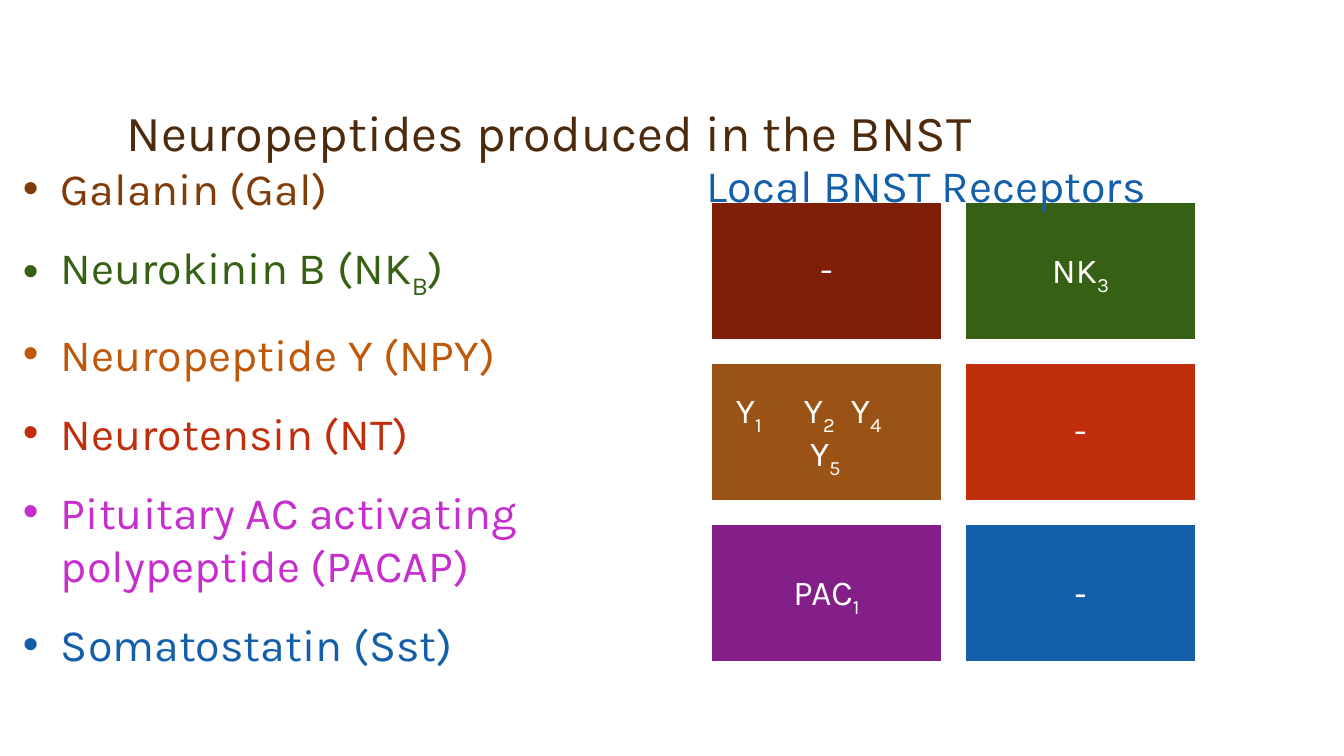
"""Build the slide on neuropeptides of the BNST and their local receptors."""
from lxml import etree
from pptx import Presentation
from pptx.dml.color import RGBColor
from pptx.enum.shapes import MSO_SHAPE
from pptx.enum.text import MSO_ANCHOR, PP_ALIGN
from pptx.oxml.ns import qn
from pptx.util import Pt

RECTANGLE = MSO_SHAPE.RECTANGLE
TOP, MIDDLE, BOTTOM = MSO_ANCHOR.TOP, MSO_ANCHOR.MIDDLE, MSO_ANCHOR.BOTTOM
LEFT, CENTER = PP_ALIGN.LEFT, PP_ALIGN.CENTER
PX = 914400 / 100.8

THEME = {
    "font": "Karla", "serif": "Times New Roman",
    "title_size": 36, "body_size": 32, "cell_size": 25,
    "title": "4D2A0B", "white": "FFFFFF", "brown": "803B07",
    "green": "366013", "orange": "C0580A", "red": "C02E0C",
    "magenta": "C62ECD", "blue": "145FAA", "maroon": "801F08",
    "ochre": "9A5315", "purple": "841E89",
}


def px(length):
    return round(length * PX)


def write(para, text, size, color, font="font", **formats):
    """Fill a paragraph; text between tildes is set as subscript."""
    for name, value in formats.items():
        setattr(para, name, value)
    for index, piece in enumerate(text.split("~")):
        if piece:
            span = para.add_run()
            span.text = piece
            span.font.size = Pt(THEME[size])
            span.font.name = THEME[font]
            span.font.color.rgb = RGBColor.from_string(THEME[color])
            if index % 2:
                span.font._element.set("baseline", "-25000")


deck = Presentation()
deck.slide_width, deck.slide_height = px(1344), px(756)
page = deck.slides.add_slide(deck.slide_layouts[6])

frames = {}
for name, bounds, anchor in [
    ("title", (117, 33, 1109, 134), BOTTOM),
    ("peptides", (13, 156, 680, 581), TOP),
]:
    box = page.shapes.add_textbox(*map(px, bounds))
    frames[name] = box.text_frame
    frames[name].word_wrap = True
    frames[name].vertical_anchor = anchor

write(frames["title"].paragraphs[0], "Neuropeptides produced in the BNST",
      "title_size", "title", line_spacing=0.9)

peptides = [
    ("Galanin (Gal)", "brown"),
    ("Neurokinin B (NK~B~)", "green"),
    ("Neuropeptide Y (NPY)", "orange"),
    ("Neurotensin (NT)", "red"),
    ("Pituitary AC activating polypeptide (PACAP)", "magenta"),
    ("Somatostatin (Sst)", "blue"),
]
for index, (peptide, color) in enumerate(peptides):
    frame = frames["peptides"]
    para = frame.add_paragraph() if index else frame.paragraphs[0]
    properties = para._p.get_or_add_pPr()
    properties.set("marL", str(px(38)))
    properties.set("indent", str(px(-38)))
    etree.SubElement(properties, qn("a:buFont")).set("typeface", "Arial")
    etree.SubElement(properties, qn("a:buChar")).set("char", "•")
    write(para, peptide, "body_size", color, space_before=Pt(18 if index else 0))

receptors = [
    ("maroon", "font", [("-", [])]),
    ("green", "font", [("NK~3~", [])]),
    ("ochre", "font", [("\tY~1~\tY~2~\tY~4~", [15, 83, 130]), ("\tY~5~", [89])]),
    ("red", "font", [("-", [])]),
    ("purple", "font", [("PAC~1~", [])]),
    ("blue", "serif", [("-", [])]),
]
for index, (color, font, lines) in enumerate(receptors):
    row, column = divmod(index, 2)
    cell = page.shapes.add_shape(RECTANGLE, px(711 + 254 * column), px(202 + 161 * row),
                                 px(231), px(138))
    cell.shadow.inherit = False
    cell.fill.solid()
    cell.fill.fore_color.rgb = RGBColor.from_string(THEME[color])
    cell.line.color.rgb = RGBColor.from_string(THEME["white"])
    cell.line.width = Pt(1)
    frame = cell.text_frame
    for name, value in {
        "word_wrap": True, "vertical_anchor": MIDDLE,
        "margin_left": px(10), "margin_right": px(10),
        "margin_top": px(10), "margin_bottom": px(10),
    }.items():
        setattr(frame, name, value)
    for number, (line, stops) in enumerate(lines):
        para = frame.add_paragraph() if number else frame.paragraphs[0]
        if stops:
            tabs = etree.SubElement(para._p.get_or_add_pPr(), qn("a:tabLst"))
            for stop in stops:
                etree.SubElement(tabs, qn("a:tab"), pos=str(px(stop)), algn="l")
        write(para, line, "cell_size", "white", font,
              alignment=LEFT if stops else CENTER, line_spacing=0.9)

heading = page.shapes.add_textbox(px(697), px(153), px(524), px(65))
heading.text_frame.word_wrap = True
write(heading.text_frame.paragraphs[0], "Local BNST Receptors", "body_size", "blue")

deck.save("out.pptx")
